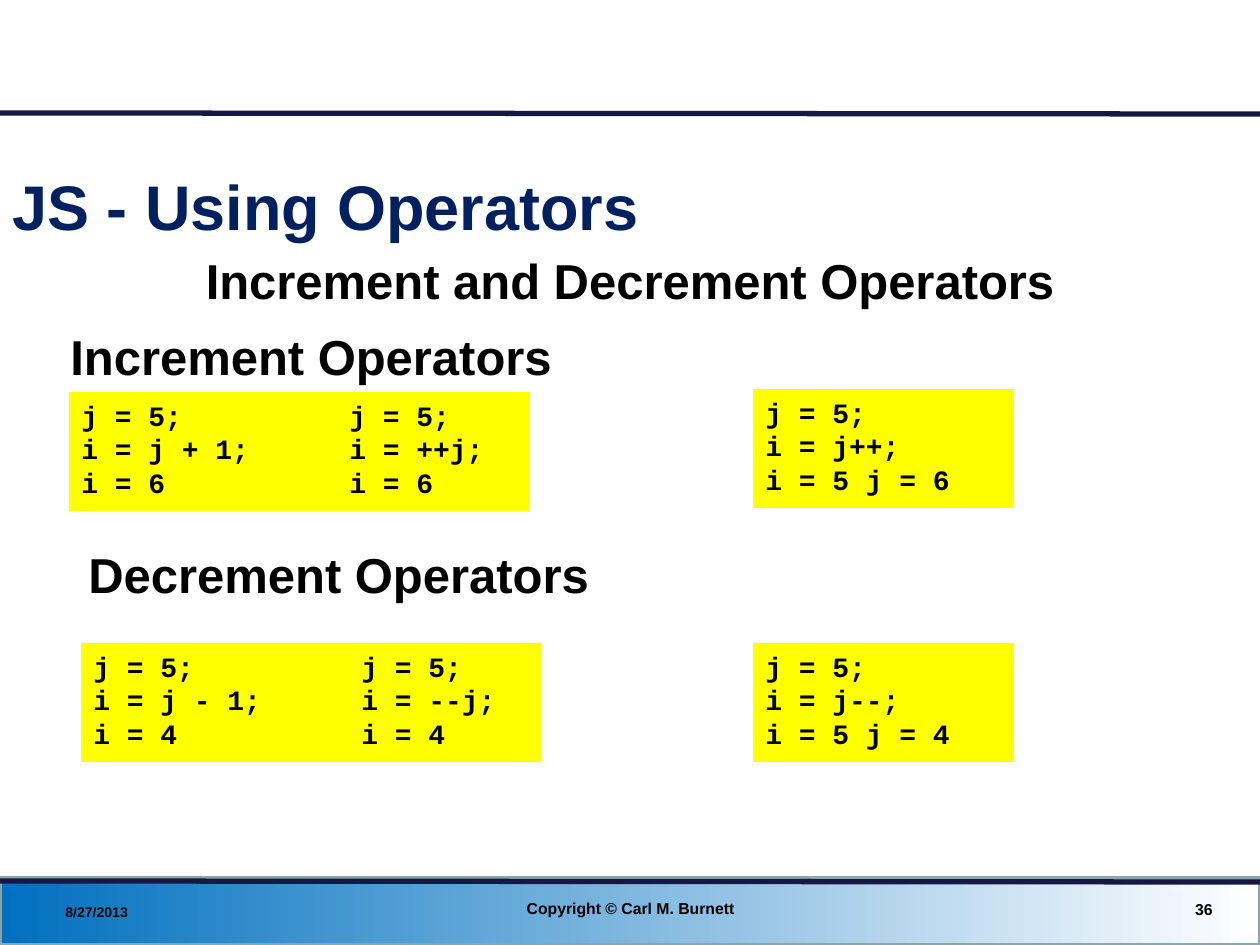
from lxml.etree import SubElement
from pptx import Presentation
from pptx.dml.color import RGBColor
from pptx.enum.shapes import MSO_CONNECTOR, MSO_SHAPE
from pptx.enum.text import MSO_ANCHOR, PP_ALIGN
from pptx.oxml.ns import qn
from pptx.util import Pt

SCALE = 914400 / 126
WIDE, HIGH = 1260, 945
TAB = 268

BLUE = RGBColor(0x00, 0x70, 0xC0)
WHITE = RGBColor(0xFF, 0xFF, 0xFF)
EDGE = RGBColor(0x8A, 0xA6, 0xA8)
INK = RGBColor(0x17, 0x17, 0x45)
NAVY = RGBColor(0x00, 0x20, 0x60)
BLACK = RGBColor(0x00, 0x00, 0x00)
YELLOW = RGBColor(0xFF, 0xFF, 0x00)


def emu(px):
    return round(px * SCALE)


class Deck:
    """Holds the style and the current slide."""
    font = "Arial"
    mono = "Courier New"

    def __init__(self):
        self.file = Presentation()
        self.file.slide_width = emu(WIDE)
        self.file.slide_height = emu(HIGH)
        self.slide = self.file.slides.add_slide(self.file.slide_layouts[6])

    def rect(self, *area):
        shape = self.slide.shapes.add_shape(
            MSO_SHAPE.RECTANGLE, *map(emu, area))
        shape.shadow.inherit = False
        return shape

    def band(self, *area):
        """Footer bar that fades from blue to white."""
        bar = self.rect(*area)
        bar.fill.gradient()
        bar.fill.gradient_angle = 0
        for stop, place, color in zip(
                bar.fill.gradient_stops, (0, 1), (BLUE, WHITE)):
            stop.position = place
            stop.color.rgb = color
        bar.line.color.rgb = EDGE
        bar.line.width = Pt(2)

    def rule(self, top):
        """Full-width line that drops by one px."""
        line = self.slide.shapes.add_connector(
            MSO_CONNECTOR.STRAIGHT, 0, emu(top), emu(WIDE), emu(top + 1))
        line.line.color.rgb = INK
        line.line.width = Pt(3)
        SubElement(line._element.spPr, qn("a:effectLst"))

    def add_run(self, para, text, size, color=BLACK, font=None):
        run = para.add_run()
        run.text = text
        run.font.name = font or self.font
        run.font.size = Pt(size)
        run.font.bold = True
        run.font.color.rgb = color

    def label(self, area, text, size, color=BLACK,
              align=PP_ALIGN.LEFT, anchor=MSO_ANCHOR.TOP):
        box = self.slide.shapes.add_textbox(*map(emu, area))
        frame = box.text_frame
        frame.word_wrap = True
        frame.vertical_anchor = anchor
        para = frame.paragraphs[0]
        para.alignment = align
        self.add_run(para, text, size, color)

    def code(self, area, lines):
        """Yellow box of code; a tab in a line starts the second column."""
        box = self.rect(*area)
        box.fill.solid()
        box.fill.fore_color.rgb = YELLOW
        box.line.fill.background()
        frame = box.text_frame
        frame.word_wrap = True
        frame.vertical_anchor = MSO_ANCHOR.TOP
        for row, line in enumerate(lines):
            para = frame.add_paragraph() if row else frame.paragraphs[0]
            para.alignment = PP_ALIGN.LEFT
            if "\t" in line:
                tabs = SubElement(
                    para._p.get_or_add_pPr(), qn("a:tabLst"))
                SubElement(tabs, qn("a:tab"), pos=str(emu(TAB)), algn="l")
            self.add_run(para, line, 16, font=self.mono)


def main():
    deck = Deck()
    mid = MSO_ANCHOR.MIDDLE

    deck.band(0, 878, WIDE, 67)
    for top in (881, 113):
        deck.rule(top)

    deck.label((0, 144, 1207, 122), "JS - Using Operators", 36, NAVY,
               anchor=mid)
    deck.label((113, 244, 1034, 71), "Increment and Decrement Operators", 28,
               align=PP_ALIGN.CENTER)

    deck.label((53, 895, 294, 34), "8/27/2013", 8, anchor=mid)
    deck.label((931, 891, 294, 37), "36", 9,
               align=PP_ALIGN.RIGHT, anchor=mid)
    deck.label((431, 890, 399, 37), "Copyright © Carl M. Burnett", 9,
               align=PP_ALIGN.CENTER, anchor=mid)

    groups = [
        ("Increment", (58, 320), (69, 392), (753, 389), "+", 6),
        ("Decrement", (76, 538), (81, 643), (753, 643), "-", 4),
    ]
    for name, head, left, right, sign, value in groups:
        deck.label((*head, 1034, 71), f"{name} Operators", 28)
        deck.code((*left, 460, 119), [
            "j = 5;\tj = 5;",
            f"i = j {sign} 1;\ti = {sign * 2}j;",
            f"i = {value}\ti = {value}",
        ])
        deck.code((*right, 261, 119), [
            "j = 5;",
            f"i = j{sign * 2};",
            f"i = 5 j = {value}",
        ])

    deck.file.save("out.pptx")


if __name__ == "__main__":
    main()
